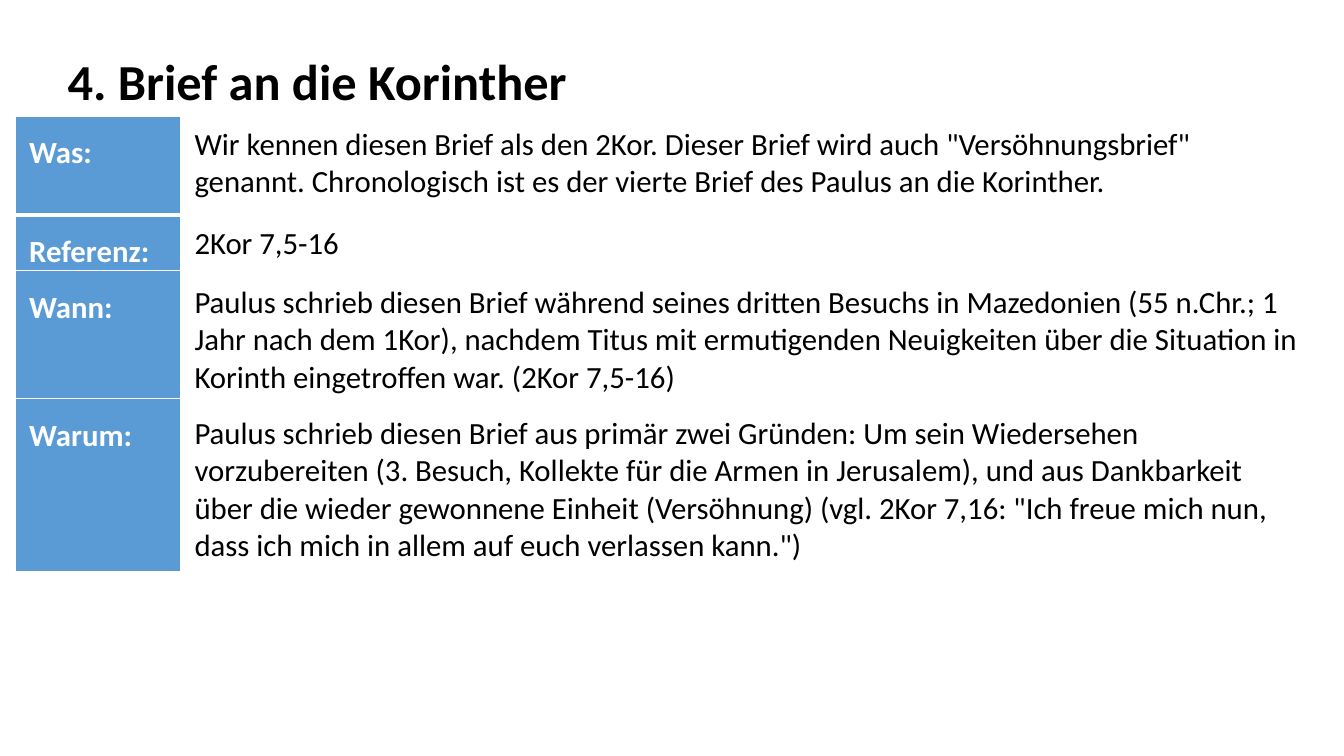
from pptx import Presentation
from pptx.dml.color import RGBColor as RGB
from pptx.enum.text import MSO_ANCHOR as Anchor, MSO_AUTO_SIZE as Fit, PP_ALIGN as Align
from pptx.oxml import parse_xml
from pptx.oxml.ns import nsdecls
from pptx.util import Inches, Pt

FONT = "Calibri"
BLUE, WHITE, BLACK = "5B9BD5", "FFFFFF", "000000"
COLS = [1.64, 11.28]

# Row height, label, space above the text, text
ROWS = [
    (0.98, "Was:", 0.1,
     'Wir kennen diesen Brief als den 2Kor. Dieser Brief wird auch "Versöhnungsbrief" '
     "genannt. Chronologisch ist es der vierte Brief des Paulus an die Korinther."),
    (0.55, "Referenz:", 0.1, "2Kor 7,5-16"),
    (1.27, "Wann:", 0.14,
     "Paulus schrieb diesen Brief während seines dritten Besuchs in Mazedonien "
     "(55 n.Chr.; 1 Jahr nach dem 1Kor), nachdem Titus mit ermutigenden Neuigkeiten "
     "über die Situation in Korinth eingetroffen war. (2Kor 7,5-16)"),
    (1.72, "Warum:", 0.17,
     "Paulus schrieb diesen Brief aus primär zwei Gründen: Um sein Wiedersehen "
     "vorzubereiten (3. Besuch, Kollekte für die Armen in Jerusalem), und aus "
     "Dankbarkeit über die wieder gewonnene Einheit (Versöhnung) (vgl. 2Kor 7,16: "
     '"Ich freue mich nun, dass ich mich in allem auf euch verlassen kann.")'),
]


def color(code):
    return RGB.from_string(code)


def add_run(para, text, size, code, bold):
    run = para.add_run()
    run.text = text
    font = run.font
    font.name, font.size, font.bold = FONT, Pt(size), bold
    font.color.rgb = color(code)


def add_title(slide, text):
    title = slide.shapes.title
    title.left, title.top = Inches(0.57), Inches(0.45)
    title.width, title.height = Inches(5.21), Inches(0.71)
    frame = title.text_frame
    frame.word_wrap = False
    frame.auto_size = Fit.SHAPE_TO_FIT_TEXT
    frame.vertical_anchor = Anchor.TOP
    para = frame.paragraphs[0]
    para.alignment = Align.LEFT
    add_run(para, text, 36, BLACK, True)


def set_edges(cell, top, bottom):
    props = cell._tc.get_or_add_tcPr()
    for side, width in (("L", 1), ("R", 1), ("T", top), ("B", bottom)):
        props.append(parse_xml(
            f'<a:ln{side} {nsdecls("a")} w="{Pt(width)}"><a:solidFill>'
            f'<a:srgbClr val="{WHITE}"/></a:solidFill></a:ln{side}>'))


def fill_cell(cell, text, fill, code, bold, top=0, space=None):
    cell.fill.solid()
    cell.fill.fore_color.rgb = color(fill)
    cell.margin_left = cell.margin_right = Inches(0.14)
    cell.margin_top, cell.margin_bottom = Inches(top), 0
    para = cell.text_frame.paragraphs[0]
    para.line_spacing = space
    add_run(para, text, 22, code, bold)


def add_grid(slide):
    height = sum(row[0] for row in ROWS)
    table = slide.shapes.add_table(
        len(ROWS), len(COLS), Inches(0.15), Inches(1.15),
        Inches(sum(COLS)), Inches(height)).table
    table.first_row = table.horz_banding = False
    for col, width in zip(table.columns, COLS):
        col.width = Inches(width)
    for i, (tall, label, top, text) in enumerate(ROWS):
        table.rows[i].height = Inches(tall)
        # Thick rule between the first two rows
        for cell in table.rows[i].cells:
            set_edges(cell, 3 if i == 1 else 1, 3 if i == 0 else 1)
        fill_cell(table.cell(i, 0), label, BLUE, WHITE, True, space=1.5)
        fill_cell(table.cell(i, 1), text, WHITE, BLACK, False, top=top)


def main():
    deck = Presentation()
    deck.slide_width, deck.slide_height = Inches(13.33), Inches(7.5)
    slide = deck.slides.add_slide(deck.slide_layouts[5])
    add_title(slide, "4. Brief an die Korinther")
    add_grid(slide)
    deck.save("out.pptx")


if __name__ == "__main__":
    main()
